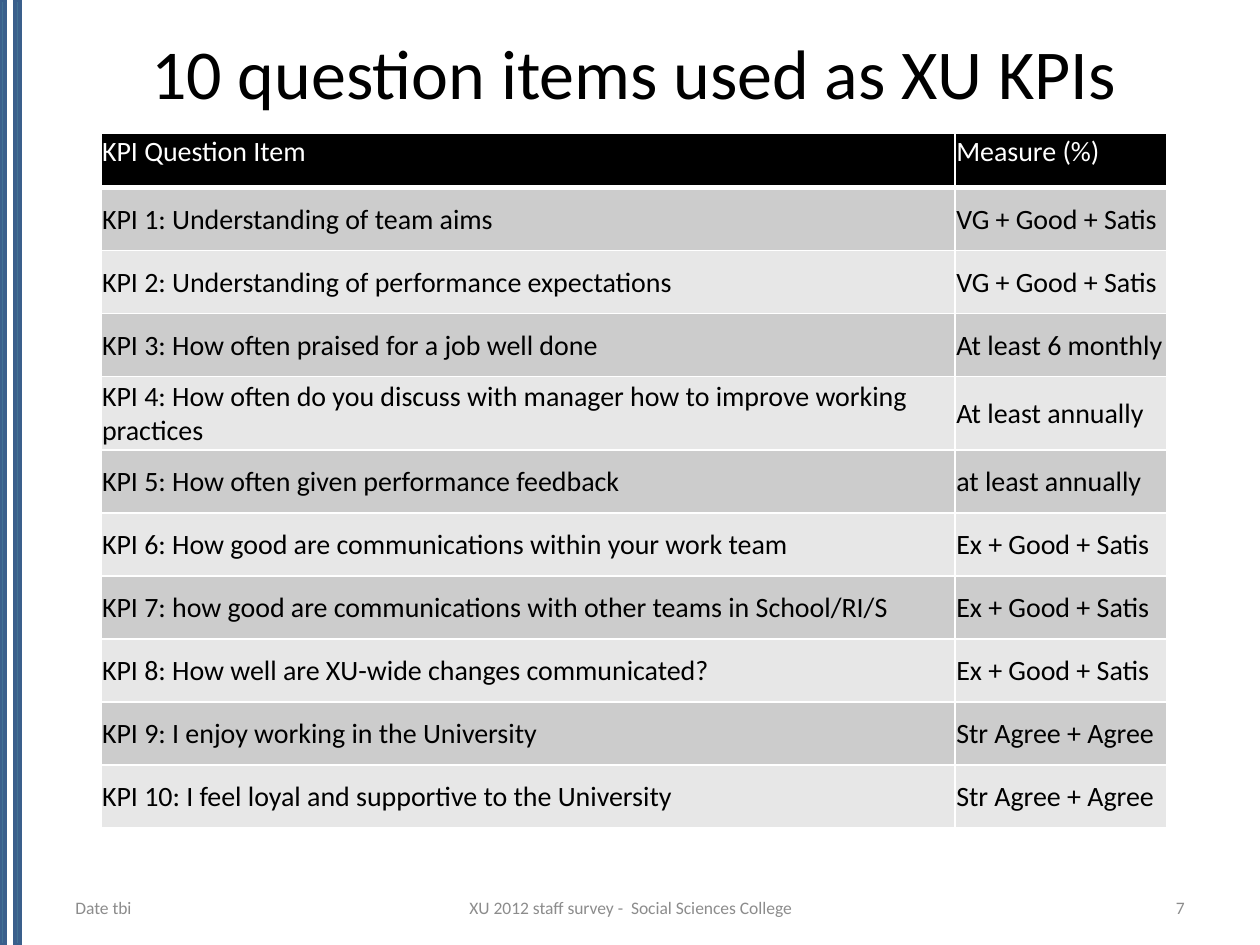
from lxml import etree
from pptx import Presentation
from pptx.dml.color import RGBColor
from pptx.enum.shapes import MSO_SHAPE
from pptx.enum.text import MSO_ANCHOR, PP_ALIGN
from pptx.oxml.ns import qn
from pptx.util import Inches, Pt

RECT = MSO_SHAPE.RECTANGLE
TOP, MID = MSO_ANCHOR.TOP, MSO_ANCHOR.MIDDLE
LEFT, CENTER, RIGHT = PP_ALIGN.LEFT, PP_ALIGN.CENTER, PP_ALIGN.RIGHT

# Content
TITLE = "10 question items used as XU KPIs"
ROWS = [
    ("KPI Question Item", "Measure (%)"),
    ("KPI 1: Understanding of team aims", "VG + Good + Satis"),
    ("KPI 2: Understanding of performance expectations", "VG + Good + Satis"),
    ("KPI 3: How often praised for a job well done", "At least 6 monthly"),
    ("KPI 4: How often do you discuss with manager how to improve working practices",
     "At least annually"),
    ("KPI 5: How often given performance feedback", "at least annually"),
    ("KPI 6: How good are communications within your work team", "Ex + Good + Satis"),
    ("KPI 7: how good are communications with other teams in School/RI/S",
     "Ex + Good + Satis"),
    ("KPI 8: How well are XU-wide changes communicated?", "Ex + Good + Satis"),
    ("KPI 9: I enjoy working in the University", "Str Agree + Agree"),
    ("KPI 10: I feel loyal and supportive to the University", "Str Agree + Agree"),
]
FOOTER = [  # text, left, width, alignment
    ("Date tbi", 0.5, 2.33, LEFT),
    ("XU 2012 staff survey -  Social Sciences College", 3.42, 3.17, CENTER),
    ("7", 7.17, 2.33, RIGHT),
]

# Layout and colours
STRIPES = [0, 0.12]
COLS = [6.78, 1.68]
HEAD_H, ROW_H, TALL_H, TALL_ROW = 0.43, 0.5, 0.58, 4
HEAD, BANDS = "000000", ["E7E7E7", "CCCCCC"]
INSETS = {"margin_left": 0.01, "margin_right": 0.01, "margin_top": 0.01, "margin_bottom": 0}


def color(code):
    return RGBColor.from_string(code)


def write(frame, text, size, code, align=LEFT, anchor=MID):
    frame.text = text
    frame.word_wrap = True
    frame.vertical_anchor = anchor
    para = frame.paragraphs[0]
    para.alignment = align
    font = para.runs[0].font
    looks = {"name": "Calibri", "size": Pt(size), "bold": False}
    for key, value in looks.items():
        setattr(font, key, value)
    font.color.rgb = color(code)


def border(cell, sides, code="FFFFFF"):
    props = cell._tc.get_or_add_tcPr()
    for side, width in sides.items():
        line = etree.SubElement(props, qn("a:ln" + side), w=str(Pt(width)))
        fill = etree.SubElement(line, qn("a:solidFill"))
        etree.SubElement(fill, qn("a:srgbClr"), val=code)


def place(shape, *box):
    for key, value in zip(("left", "top", "width", "height"), box):
        setattr(shape, key, Inches(value))


def row_height(row):
    return {0: HEAD_H, TALL_ROW: TALL_H}.get(row, ROW_H)


deck = Presentation()
deck.slide_width, deck.slide_height = Inches(10), Inches(7.5)
slide = deck.slides.add_slide(deck.slide_layouts[5])
shapes = slide.shapes

# Stripes down the left edge
for left in STRIPES:
    bar = shapes.add_shape(RECT, Inches(left), 0, Inches(0.04), Inches(7.5))
    bar.shadow.inherit = False
    bar.fill.solid()
    bar.fill.fore_color.rgb = color("427294")
    bar.line.color.rgb = color("3A5F8C")
    bar.line.width = Pt(2)

# Title
place(shapes.title, 0.5, 0.13, 9.06, 0.87)
write(shapes.title.text_frame, TITLE, 40, "000000", CENTER)

# Footer
for text, left, width, align in FOOTER:
    box = shapes.add_textbox(Inches(left), Inches(7.06), Inches(width), Inches(0.29))
    write(box.text_frame, text, 10, "8C8C8C", align)

# Table of question items
heights = [row_height(row) for row in range(len(ROWS))]
grid = shapes.add_table(len(ROWS), len(COLS), Inches(0.8), Inches(1.06),
                        Inches(sum(COLS)), Inches(sum(heights))).table
for col, width in enumerate(COLS):
    grid.columns[col].width = Inches(width)
for row, texts in enumerate(ROWS):
    grid.rows[row].height = Inches(heights[row])
    first = row == 0
    for col, text in enumerate(texts):
        cell = grid.cell(row, col)
        for key, value in INSETS.items():
            setattr(cell, key, Inches(value))
        write(cell.text_frame, text, 16, "FFFFFF" if first else "000000")
        cell.vertical_anchor = TOP if first else MID
        border(cell, {"L": 1, "R": 1, "T": 1, "B": 3 if first else 1})
        cell.fill.solid()
        cell.fill.fore_color.rgb = color(HEAD if first else BANDS[row % 2])

deck.save("out.pptx")
